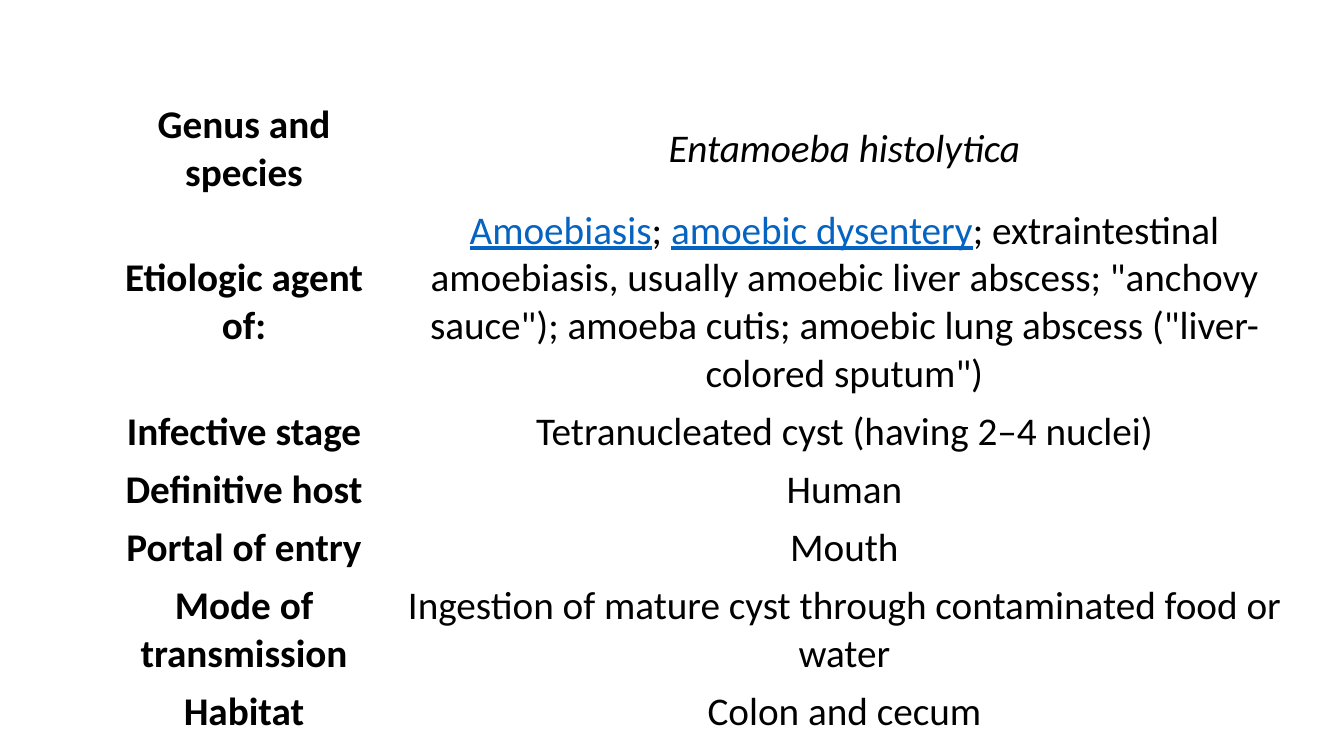
"""Build a slide with a fact table about Entamoeba histolytica."""
from pptx import Presentation
from pptx.dml.color import RGBColor
from pptx.enum.text import MSO_ANCHOR, PP_ALIGN
from pptx.util import Inches, Pt

BLACK = RGBColor(0x00, 0x00, 0x00)
LINK_BLUE = RGBColor(0x05, 0x63, 0xC1)

FORMATS = {
    "label": {"bold": True},
    "plain": {"bold": False},
    "species": {"bold": False, "italic": True},
    "link": {"bold": False, "underline": True},
}

FACTS = [
    ("Genus and species", 0.85, [("Entamoeba histolytica", "species")]),
    ("Etiologic agent of:", 1.96, [
        ("Amoebiasis", "link"),
        ("; ", "plain"),
        ("amoebic dysentery", "link"),
        ('; extraintestinal amoebiasis, usually amoebic liver abscess; "anchovy sauce"); '
         'amoeba cutis; amoebic lung abscess ("liver-colored sputum")', "plain"),
    ]),
    ("Infective stage", 0.56, [("Tetranucleated cyst (having 2–4 nuclei)", "plain")]),
    ("Definitive host", 0.56, [("Human", "plain")]),
    ("Portal of entry", 0.56, [("Mouth", "plain")]),
    ("Mode of transmission", 1.03,
     [("Ingestion of mature cyst through contaminated food or water", "plain")]),
    ("Habitat", 0.56, [("Colon and cecum", "plain")]),
]
COLUMN_WIDTHS = (2.98, 8.93)
TABLE_LEFT, TABLE_TOP = 0.93, 0.95


def fill_cell(cell, runs):
    cell.fill.background()
    cell.vertical_anchor = MSO_ANCHOR.MIDDLE
    paragraph = cell.text_frame.paragraphs[0]
    paragraph.alignment = PP_ALIGN.CENTER
    for text, kind in runs:
        run = paragraph.add_run()
        run.text = text
        run.font.name = "Calibri"
        run.font.size = Pt(28)
        run.font.color.rgb = LINK_BLUE if kind == "link" else BLACK
        for attribute, value in FORMATS[kind].items():
            setattr(run.font, attribute, value)


def main():
    presentation = Presentation()
    presentation.slide_width = Inches(13.33)
    presentation.slide_height = Inches(7.5)
    slide = presentation.slides.add_slide(presentation.slide_layouts[6])

    table_height = sum(height for _, height, _ in FACTS)
    table = slide.shapes.add_table(
        len(FACTS), len(COLUMN_WIDTHS), Inches(TABLE_LEFT), Inches(TABLE_TOP),
        Inches(sum(COLUMN_WIDTHS)), Inches(table_height)).table
    table.first_row = False
    table.horz_banding = False
    for column, width in zip(table.columns, COLUMN_WIDTHS):
        column.width = Inches(width)
    for row, (label, height, details) in zip(table.rows, FACTS):
        row.height = Inches(height)
        fill_cell(row.cells[0], [(label, "label")])
        fill_cell(row.cells[1], details)

    presentation.save("out.pptx")


if __name__ == "__main__":
    main()
